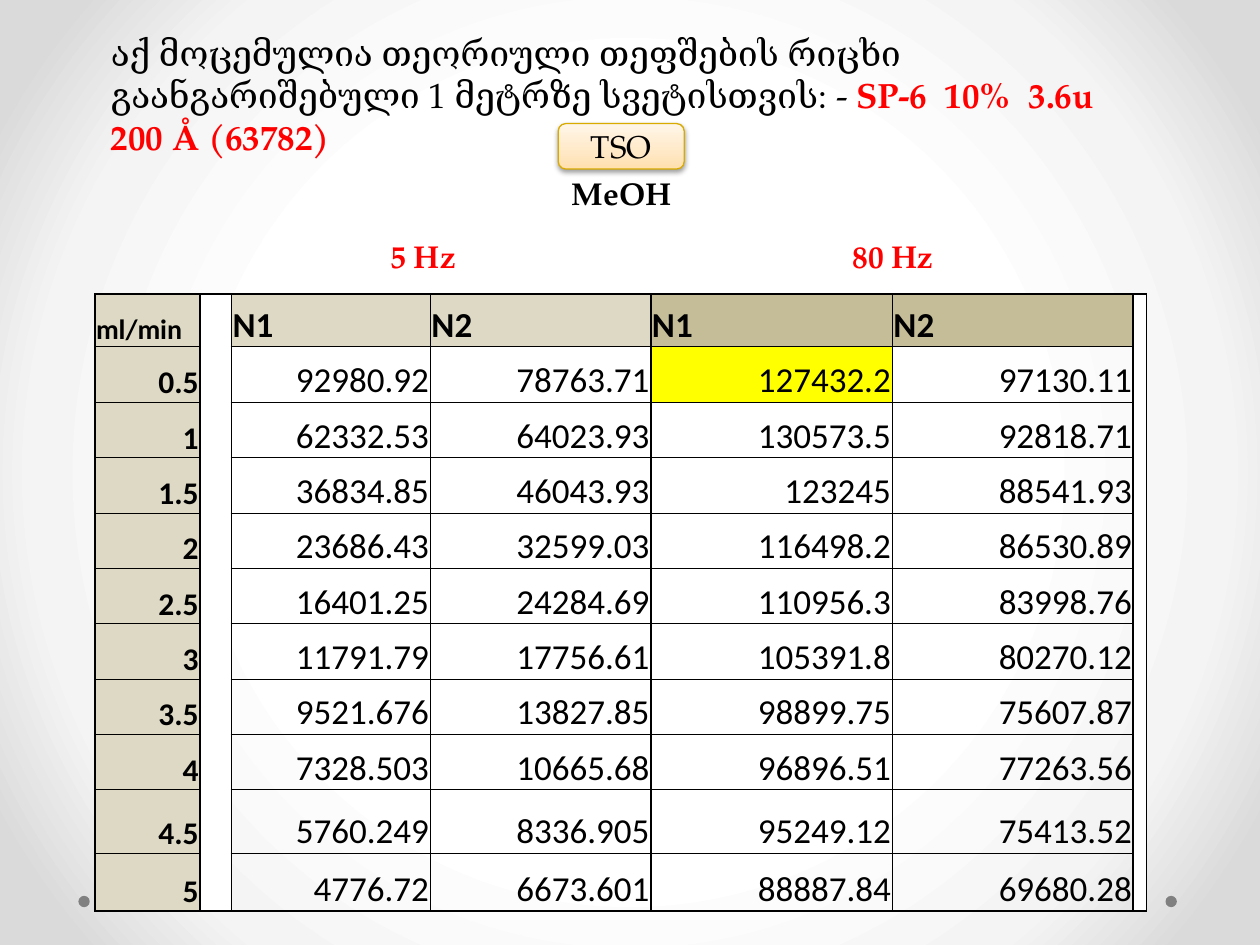
from dataclasses import dataclass

from pptx import Presentation
from pptx.dml.color import RGBColor
from pptx.enum.shapes import MSO_SHAPE as Shape
from pptx.enum.text import MSO_ANCHOR as Anchor, MSO_AUTO_SIZE as AutoSize, PP_ALIGN as Align
from pptx.oxml import parse_xml
from pptx.oxml.ns import nsdecls
from pptx.util import Pt

BLACK = RGBColor(0x00, 0x00, 0x00)
WHITE = RGBColor(0xFF, 0xFF, 0xFF)
RED = RGBColor(0xFF, 0x00, 0x00)
YELLOW = RGBColor(0xFF, 0xFF, 0x00)
GREY = RGBColor(0x80, 0x80, 0x80)
SAND = RGBColor(0xDD, 0xD9, 0xC4)
KHAKI = RGBColor(0xC4, 0xBD, 0x97)
GOLD = RGBColor(0xD9, 0xAA, 0x00)
BACKDROP = [(50, WHITE), (76, RGBColor(0xF4, 0xF4, 0xF4)), (92, RGBColor(0xDA, 0xDA, 0xDA))]
PEACH = [(0, RGBColor(0xFF, 0xDF, 0xAD)), (35, RGBColor(0xFF, 0xE8, 0xC5)),
         (100, RGBColor(0xFF, 0xF6, 0xE9))]
RADIAL = ('<a:path path="circle"><a:fillToRect l="50000" t="50000" r="50000" b="50000"/>'
          '</a:path>')
UPWARD = '<a:lin ang="16200000" scaled="0"/>'

SERIF = "TeX Gyre Pagella"
SANS = "Calibri"

COLUMN_WIDTHS = [60, 18, 113.7, 126, 138, 137.7, 7.7]
ROW_HEIGHTS = [30.2] + [31.65] * 8 + [36.3, 33]
VERTICAL_LINES = [1, 1, 1, 0.5, 1, 0.5, 1, 1]
GAP_COLUMNS = (1, 6)
HEADER_FILLS = [SAND, WHITE, SAND, SAND, KHAKI, KHAKI, WHITE]
WHITE_CELLS = [(1, 2), (2, 2), (2, 4)]
HIGHLIGHT = (1, 4)
PLATE_COUNTS = [
    ("ml/min", "N1", "N2", "N1", "N2"),
    ("0.5", "92980.92", "78763.71", "127432.2", "97130.11"),
    ("1", "62332.53", "64023.93", "130573.5", "92818.71"),
    ("1.5", "36834.85", "46043.93", "123245", "88541.93"),
    ("2", "23686.43", "32599.03", "116498.2", "86530.89"),
    ("2.5", "16401.25", "24284.69", "110956.3", "83998.76"),
    ("3", "11791.79", "17756.61", "105391.8", "80270.12"),
    ("3.5", "9521.676", "13827.85", "98899.75", "75607.87"),
    ("4", "7328.503", "10665.68", "96896.51", "77263.56"),
    ("4.5", "5760.249", "8336.905", "95249.12", "75413.52"),
    ("5", "4776.72", "6673.601", "88887.84", "69680.28"),
]


@dataclass
class Span:
    text: str
    color: RGBColor
    bold: bool = True


@dataclass
class Label:
    left: float
    top: float
    width: float
    height: float
    size: float
    spans: list[Span]
    wrap: bool = True


LABELS = [
    Label(56.2, 14.4, 599, 55.4, 20, [
        Span("აქ მოცემულია თეორიული თეფშების რიცხი გაანგარიშებული 1 მეტრზე სვეტისთვის: -",
             BLACK, False),
        Span(" SP-6  10%  3.6u  200 Å (63782)", RED)]),
    Label(319.7, 95.8, 72, 29, 18, [Span("MeOH", BLACK)], wrap=False),
    Label(216, 131.8, 66, 29, 18, [Span("5 Hz", RED)]),
    Label(480, 131.8, 66, 29, 18, [Span("80 Hz", RED)]),
]


def style(font, name: str, size: float, color: RGBColor, bold: bool) -> None:
    font.name = name
    font.size = Pt(size)
    font.color.rgb = color
    font.bold = bold


def gradient(stops: list, direction: str) -> str:
    marks = "".join(f'<a:gs pos="{place * 1000}"><a:srgbClr val="{color}"/></a:gs>'
                    for place, color in stops)
    return f'<a:gradFill {nsdecls("a")}><a:gsLst>{marks}</a:gsLst>{direction}</a:gradFill>'


def paint_background(page) -> None:
    page.element.cSld.insert(0, parse_xml(
        f'<p:bg {nsdecls("p", "a")}><p:bgPr>{gradient(BACKDROP, RADIAL)}'
        '<a:effectLst/></p:bgPr></p:bg>'))


def add_dot(page, left: float) -> None:
    dot = page.shapes.add_shape(Shape.OVAL, Pt(left), Pt(511.9), Pt(6.5), Pt(6.5))
    dot.shadow.inherit = False
    dot.fill.solid()
    dot.fill.fore_color.rgb = GREY
    dot.line.fill.background()


def add_label(page, label: Label) -> None:
    box = page.shapes.add_textbox(Pt(label.left), Pt(label.top), Pt(label.width), Pt(label.height))
    frame = box.text_frame
    frame.word_wrap = label.wrap
    frame.auto_size = AutoSize.SHAPE_TO_FIT_TEXT
    for span in label.spans:
        run = frame.paragraphs[0].add_run()
        run.text = span.text
        style(run.font, SERIF, label.size, span.color, span.bold)


def add_badge(page) -> None:
    badge = page.shapes.add_shape(Shape.ROUNDED_RECTANGLE, Pt(319), Pt(70.6), Pt(72), Pt(26))
    badge.line.color.rgb = GOLD
    badge.line.width = Pt(0.75)
    properties = badge.element.spPr
    properties.prstGeom.addnext(parse_xml(gradient(PEACH, UPWARD)))
    properties.append(parse_xml(
        f'<a:effectLst {nsdecls("a")}><a:outerShdw blurRad="{Pt(3.1)}" dist="{Pt(1.6)}" '
        'dir="5400000" rotWithShape="0"><a:srgbClr val="000000"><a:alpha val="38000"/>'
        '</a:srgbClr></a:outerShdw></a:effectLst>'))
    frame = badge.text_frame
    frame.text = "TSO"
    frame.vertical_anchor = Anchor.MIDDLE
    frame.paragraphs[0].alignment = Align.CENTER
    style(frame.paragraphs[0].runs[0].font, SERIF, 18, BLACK, False)


def set_borders(cell, row: int, column: int) -> None:
    inner = 0 if column in GAP_COLUMNS else 0.5
    widths = {
        "L": VERTICAL_LINES[column],
        "R": VERTICAL_LINES[column + 1],
        "T": 1 if row == 0 else inner,
        "B": 1 if row == len(ROW_HEIGHTS) - 1 else inner,
    }
    for side, width in widths.items():
        paint = f'<a:solidFill><a:srgbClr val="{BLACK}"/></a:solidFill>' if width else "<a:noFill/>"
        cell._tc.get_or_add_tcPr().append(parse_xml(
            f'<a:ln{side} {nsdecls("a")} w="{Pt(width)}">{paint}</a:ln{side}>'))


def cell_fill(row: int, column: int) -> RGBColor | None:
    if row == 0:
        return HEADER_FILLS[column]
    if column == 0:
        return SAND
    if (row, column) == HIGHLIGHT:
        return YELLOW
    return WHITE if column in GAP_COLUMNS or (row, column) in WHITE_CELLS else None


def fill_cell(cell, row: int, column: int, text: str) -> None:
    cell.margin_left = cell.margin_right = cell.margin_top = Pt(0.7)
    cell.margin_bottom = Pt(0)
    cell.vertical_anchor = Anchor.BOTTOM
    set_borders(cell, row, column)
    color = cell_fill(row, column)
    if color is None:
        cell.fill.background()
    else:
        cell.fill.solid()
        cell.fill.fore_color.rgb = color
    if text:
        cell.text_frame.text = text
        paragraph = cell.text_frame.paragraphs[0]
        paragraph.alignment = Align.RIGHT if row else Align.LEFT
        size = 20 if column else (18 if row else 16)
        style(paragraph.runs[0].font, SANS, size, BLACK, row == 0 or column == 0)


def add_plate_table(page) -> None:
    table = page.shapes.add_table(len(ROW_HEIGHTS), len(COLUMN_WIDTHS), Pt(54.2), Pt(168),
                                  Pt(sum(COLUMN_WIDTHS)), Pt(sum(ROW_HEIGHTS))).table
    table.first_row = table.horz_banding = False
    for column, width in zip(table.columns, COLUMN_WIDTHS):
        column.width = Pt(width)
    for row, (rate, *counts) in enumerate(PLATE_COUNTS):
        table.rows[row].height = Pt(ROW_HEIGHTS[row])
        for column, text in enumerate([rate, "", *counts, ""]):
            fill_cell(table.cell(row, column), row, column, text)


def main() -> None:
    deck = Presentation()
    deck.slide_width, deck.slide_height = Pt(720), Pt(540)
    page = deck.slides.add_slide(deck.slide_layouts[6])
    paint_background(page)
    for left in (666, 44.8):
        add_dot(page, left)
    add_plate_table(page)
    for label in LABELS:
        add_label(page, label)
    add_badge(page)
    deck.save("out.pptx")


if __name__ == "__main__":
    main()
